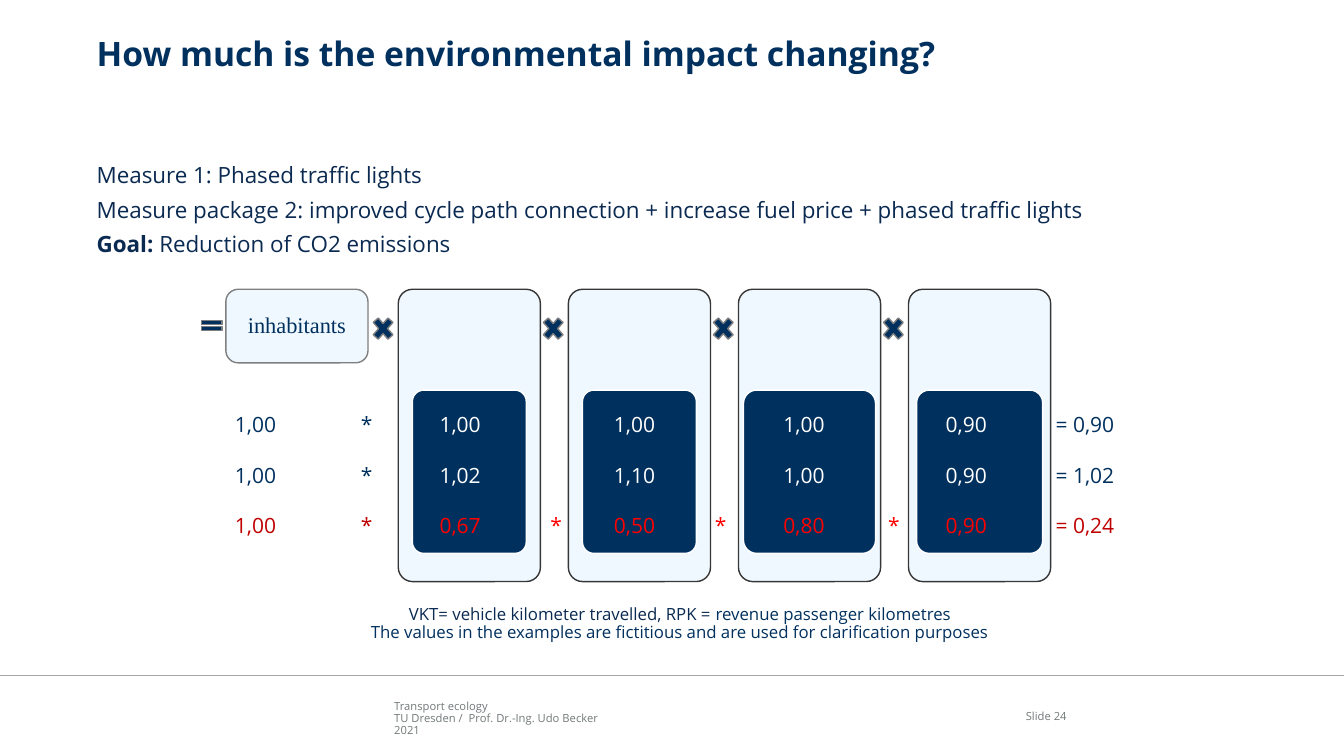
from lxml import etree
from pptx import Presentation
from pptx.dml.color import RGBColor
from pptx.enum.shapes import MSO_CONNECTOR, MSO_SHAPE
from pptx.enum.text import MSO_ANCHOR, PP_ALIGN
from pptx.oxml.ns import qn
from pptx.util import Inches, Pt

ROUND, TIMES, EQUAL = MSO_SHAPE.ROUNDED_RECTANGLE, MSO_SHAPE.MATH_MULTIPLY, MSO_SHAPE.MATH_EQUAL
LEFT, CENTER, RIGHT = PP_ALIGN.LEFT, PP_ALIGN.CENTER, PP_ALIGN.RIGHT
TOP, MIDDLE, BOTTOM = MSO_ANCHOR.TOP, MSO_ANCHOR.MIDDLE, MSO_ANCHOR.BOTTOM
NAVY, INK, PALE, WHITE = "00305E", "0B2A51", "F0F8FF", "FFFFFF"
DARK_RED, RED, GREY, EDGE = "C00000", "FF0000", "727879", "7F7F7F"

# Content: a paragraph is a list of (text, format) runs
TITLE = [[("How much is the environmental impact changing?", {"bold": True})]]
MEASURES = [
    [("Measure 1: Phased traffic lights", {})],
    [("Measure package 2: improved cycle path connection + increase fuel price"
      " + phased traffic lights", {})],
    [("Goal: ", {"bold": True}), ("Reduction of CO2 emissions", {})],
]
NOTES = [
    [("VKT= vehicle kilometer travelled, RPK = ", {"color": INK}),
     ("revenue passenger kilometres", {})],
    [("The values in the examples are fictitious and are used for clarification purposes", {})],
]
FOOTER = [[(line, {})] for line in
          ("Transport ecology", "TU Dresden /  Prof. Dr.-Ing. Udo Becker", "2021")]
PAGE = [[("Slide 24", {})]]
# Inhabitants, four factors, result, sign between factors, outer and inner colour
ROWS = [
    ("1,00", ["1,00", "1,00", "1,00", "0,90"], "0,90", "", NAVY, WHITE),
    ("1,00", ["1,02", "1,10", "1,00", "0,90"], "1,02", "", NAVY, WHITE),
    ("1,00", ["0,67", "0,50", "0,80", "0,90"], "0,24", "*", DARK_RED, RED),
]
PANEL_WIDTHS = [1.13, 1.13, 1.31, 1.25]
TAB_STOPS = [1.25, 2.03, 3.13, 3.76, 4.76, 5.44, 6.48, 7.05, 8.14]

prs = Presentation()
prs.slide_width, prs.slide_height = Inches(13.33), Inches(7.5)
s = prs.slides.add_slide(prs.slide_layouts[6])


def rgb(value):
    return RGBColor.from_string(value)


def write(sp, paras, size=16, color=NAVY, font="Open Sans", align=LEFT, anchor=TOP,
          gap=0, margins=(0, 0, 0, 0), stops=()):
    tf = sp.text_frame
    tf.word_wrap = True
    tf.vertical_anchor = anchor
    tf.margin_left, tf.margin_top, tf.margin_right, tf.margin_bottom = map(Inches, margins)
    for i, runs in enumerate(paras):
        p = tf.paragraphs[0] if i == 0 else tf.add_paragraph()
        p.alignment = align
        p.line_spacing = 0.88
        if i:
            p.space_before = Pt(gap)
        if stops:
            tabs = etree.SubElement(p._p.get_or_add_pPr(), qn("a:tabLst"))
            for stop in stops:
                etree.SubElement(tabs, qn("a:tab"), pos=str(Inches(stop)), algn="l")
        for text, fmt in runs:
            r = p.add_run()
            r.text = text
            r.font.name, r.font.size = font, Pt(size)
            r.font.bold = fmt.get("bold", False)
            r.font.color.rgb = rgb(fmt.get("color", color))


def text_box(x, y, w, h, paras, **fmt):
    write(s.shapes.add_textbox(Inches(x), Inches(y), Inches(w), Inches(h)), paras, **fmt)


def shape(kind, x, y, w, h, fill, line, corner=None):
    sp = s.shapes.add_shape(kind, Inches(x), Inches(y), Inches(w), Inches(h))
    sp.shadow.inherit = False
    sp.fill.solid()
    sp.fill.fore_color.rgb = rgb(fill)
    sp.line.color.rgb = rgb(line)
    sp.line.width = Pt(1)
    if corner is not None:
        sp.adjustments[0] = corner
    return sp


# Footer
rule = s.shapes.add_connector(MSO_CONNECTOR.STRAIGHT, 0, Inches(6.7), prs.slide_width, Inches(6.7))
rule.line.color.rgb = rgb("A6A6A6")
rule.line.width = Pt(1)
etree.SubElement(rule._element.spPr, qn("a:effectLst"))
text_box(3.91, 6.91, 5.67, 0.4, FOOTER, size=8, color=GREY, anchor=BOTTOM)
text_box(9.81, 6.77, 0.77, 0.4, PAGE, size=8, color=GREY, align=RIGHT, anchor=BOTTOM)

# Title and measures
text_box(0.96, 0.38, 11.57, 0.75, TITLE, size=24)
text_box(0.96, 1.63, 11.57, 1.15, MEASURES, color=INK, gap=8)

# Formula: inhabitants times four factor columns
box_w, box_y, pitch = 1.41, 2.87, 1.687
shape(EQUAL, 1.96, 3.15, 0.28, 0.16, NAVY, EDGE)
inhabitants = shape(ROUND, 2.24, box_y, box_w, 0.73, PALE, EDGE)
write(inhabitants, [[("inhabitants", {})]], font="Times New Roman", align=CENTER, anchor=MIDDLE)
for i, panel_w in enumerate(PANEL_WIDTHS):
    x = 3.95 + i * pitch
    shape(ROUND, x, box_y, box_w, 2.9, PALE, "363636", 0.1)
    shape(ROUND, x + (box_w - panel_w) / 2, 3.87, panel_w, 1.62, NAVY, WHITE, 0.1)
    shape(TIMES, x - 0.29, 3.1, 0.28, 0.32, NAVY, EDGE)

# Example calculations, aligned on tab stops
for i, (people, factors, result, sign, outer, inner) in enumerate(ROWS):
    runs = [(f"{people}\t*\t", {"color": outer}),
            (f"\t{sign}\t".join(factors), {"color": inner}),
            (f"\t= {result}", {"color": outer})]
    text_box(2.33, 4.07 + 0.5 * i, 9.33, 0.42, [runs], size=15,
             margins=(0, 0.05, 0.1, 0.05), stops=TAB_STOPS)

# Notes
text_box(0.96, 5.97, 11.57, 0.5, NOTES, size=12, align=CENTER, margins=(0.1, 0.05, 0.1, 0.05))

prs.save("out.pptx")
